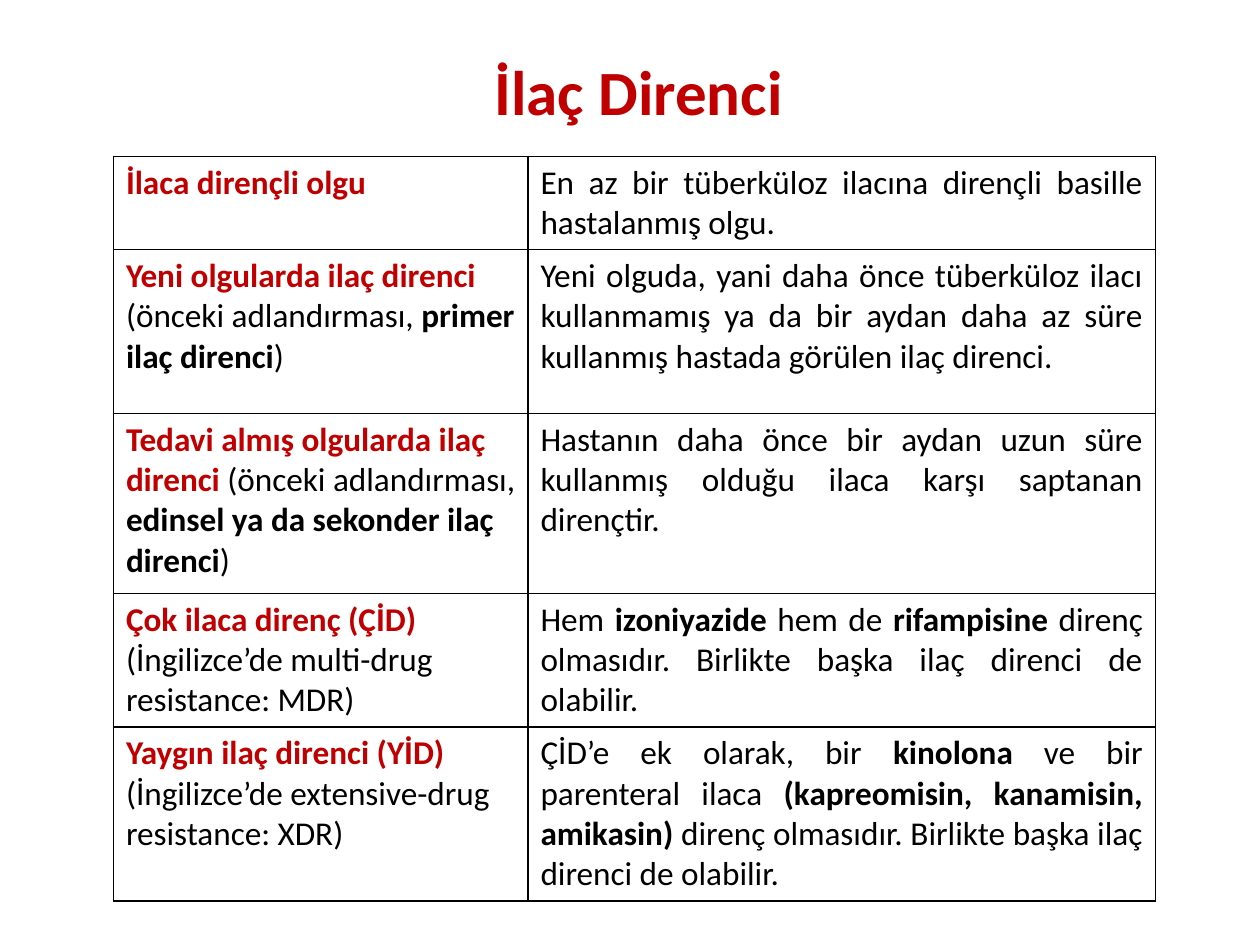
"""Builds a slide with a table of drug resistance definitions."""
from lxml.etree import SubElement
from pptx import Presentation
from pptx.dml.color import RGBColor
from pptx.enum.text import MSO_ANCHOR, PP_ALIGN
from pptx.oxml.ns import qn
from pptx.util import Inches, Pt

RED = RGBColor(0xC0, 0x00, 0x00)
BLACK = RGBColor(0x00, 0x00, 0x00)
FONT = "Calibri"
TITLE = "İlaç Direnci"
COLS = [3.29, 4.98]
ROWS = [0.74, 1.3, 1.43, 1.05, 1.37]
STYLES = {"term": (RED, True), "bold": (BLACK, True), "text": (BLACK, False)}

CELLS = [
    ([("term", "İlaca dirençli olgu")],
     [("text", "En az bir tüberküloz ilacına dirençli basille hastalanmış olgu.")]),
    ([("term", "Yeni olgularda ilaç direnci "), ("text", "(önceki adlandırması, "),
      ("bold", "primer ilaç direnci"), ("text", ")")],
     [("text", "Yeni olguda, yani daha önce tüberküloz ilacı kullanmamış ya da "
               "bir aydan daha az süre kullanmış hastada görülen ilaç direnci.")]),
    ([("term", "Tedavi almış olgularda ilaç direnci "), ("text", "(önceki adlandırması, "),
      ("bold", "edinsel ya da sekonder ilaç direnci"), ("text", ")")],
     [("text", "Hastanın daha önce bir aydan uzun süre kullanmış olduğu ilaca "
               "karşı saptanan dirençtir.")]),
    ([("term", "Çok ilaca direnç (ÇİD) "),
      ("text", "(İngilizce’de multi-drug resistance: MDR)")],
     [("text", "Hem "), ("bold", "izoniyazide"), ("text", " hem de "),
      ("bold", "rifampisine "),
      ("text", "direnç olmasıdır. Birlikte başka ilaç direnci de olabilir.")]),
    ([("term", "Yaygın ilaç direnci (YİD) "),
      ("text", "(İngilizce’de extensive-drug resistance: XDR)")],
     [("text", "ÇİD’e ek olarak, bir "), ("bold", "kinolona"),
      ("text", " ve bir parenteral ilaca "),
      ("bold", "(kapreomisin, kanamisin, amikasin)"),
      ("text", " direnç olmasıdır. Birlikte başka ilaç direnci de olabilir.")]),
]


def add_title(slide):
    title = slide.shapes.title
    title.left, title.top = Inches(1.53), Inches(0.37)
    title.width, title.height = Inches(7.08), Inches(0.7)
    title.text_frame.text = TITLE
    title.text_frame.vertical_anchor = MSO_ANCHOR.MIDDLE
    para = title.text_frame.paragraphs[0]
    para.alignment = PP_ALIGN.CENTER
    font = para.font
    font.name, font.size, font.bold = FONT, Pt(36), True
    font.color.rgb = RED


def add_borders(cell):
    props = cell._tc.get_or_add_tcPr()
    for side in ("a:lnL", "a:lnR", "a:lnT", "a:lnB"):
        line = SubElement(props, qn(side), w=str(Pt(1)))
        fill = SubElement(line, qn("a:solidFill"))
        SubElement(fill, qn("a:srgbClr"), val=str(BLACK))


def fill_cell(cell, runs, align):
    add_borders(cell)
    cell.fill.background()
    para = cell.text_frame.paragraphs[0]
    para.alignment = align
    para.font.name, para.font.size = FONT, Pt(19)
    for style, text in runs:
        run = para.add_run()
        run.text = text
        run.font.color.rgb, run.font.bold = STYLES[style]


def add_table(slide):
    table = slide.shapes.add_table(
        len(ROWS), len(COLS), Inches(0.9), Inches(1.24),
        Inches(sum(COLS)), Inches(sum(ROWS))).table
    table.first_row = table.horz_banding = False
    for col, width in zip(table.columns, COLS):
        col.width = Inches(width)
    for row, height, texts in zip(table.rows, ROWS, CELLS):
        row.height = Inches(height)
        for cell, runs, align in zip(row.cells, texts, (PP_ALIGN.LEFT, PP_ALIGN.JUSTIFY)):
            fill_cell(cell, runs, align)


def main():
    prs = Presentation()
    prs.slide_width, prs.slide_height = Inches(10), Inches(7.5)
    slide = prs.slides.add_slide(prs.slide_layouts[5])
    add_title(slide)
    add_table(slide)
    prs.save("out.pptx")


if __name__ == "__main__":
    main()
